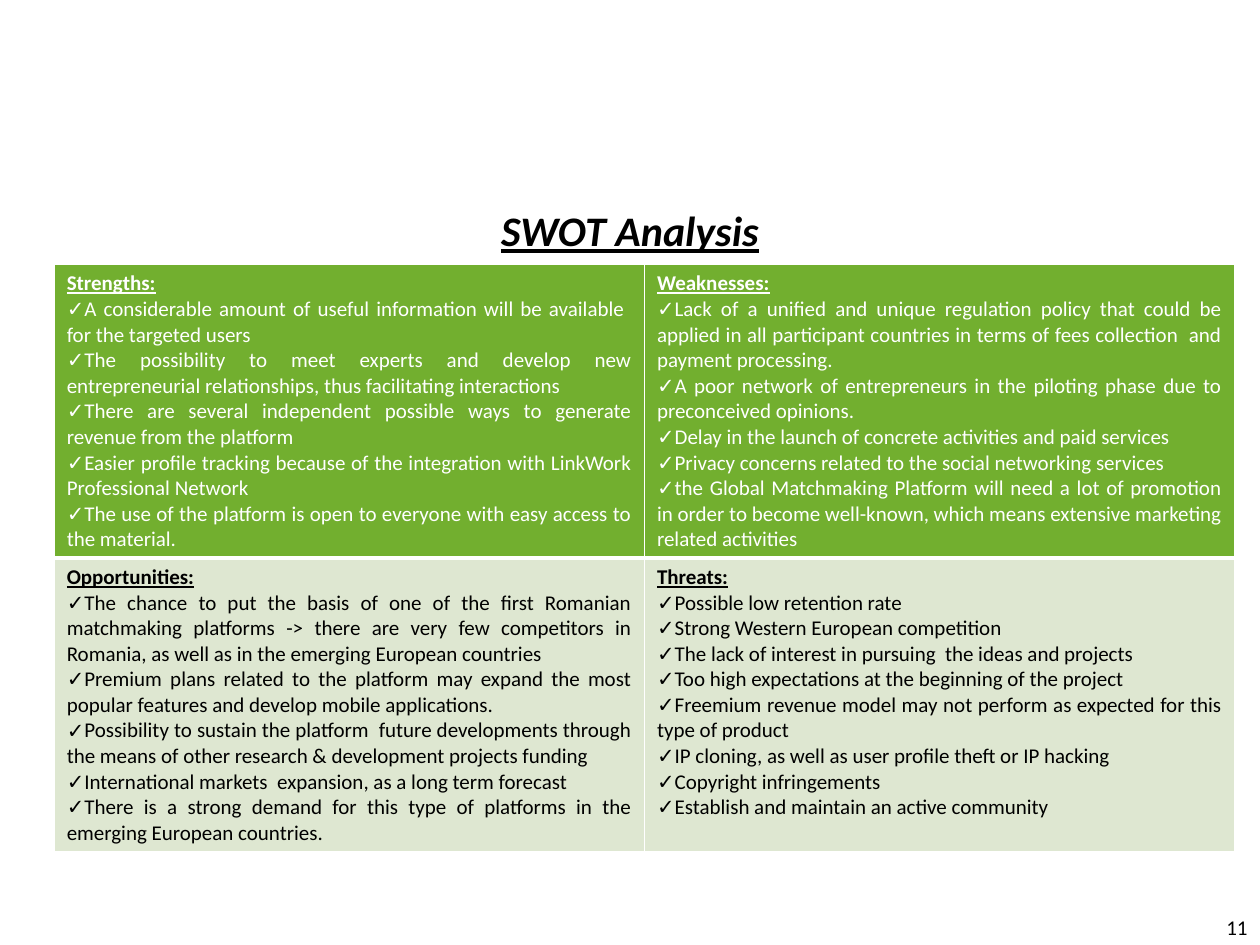
from lxml import etree
from pptx import Presentation
from pptx import util as u
from pptx.dml.color import RGBColor
from pptx.enum import text
from pptx.oxml.ns import qn

INK = {"white": "FFFFFF", "black": "000000", "green": "72AF2F", "pale": "DEE7D1"}
FONT = "Calibri"

# Quadrants, row by row: heading and points
SWOT = [
    [
        ("Strengths:", [
            "A considerable amount of useful information will be available  for the targeted users",
            "The possibility to meet experts and develop new entrepreneurial relationships, "
            "thus facilitating interactions",
            "There are several independent possible ways to generate revenue from the platform",
            "Easier profile tracking because of the integration with LinkWork Professional Network",
            "The use of the platform is open to everyone with easy access to the material.",
        ]),
        ("Weaknesses:", [
            "Lack of a unified and unique regulation policy that could be applied in all "
            "participant countries in terms of fees collection  and payment processing.",
            "A poor network of entrepreneurs in the piloting phase due to preconceived opinions.",
            "Delay in the launch of concrete activities and paid services",
            "Privacy concerns related to the social networking services",
            "the Global Matchmaking Platform will need a lot of promotion in order to become "
            "well-known, which means extensive marketing related activities",
        ]),
    ],
    [
        ("Opportunities:", [
            "The chance to put the basis of one of the first Romanian matchmaking platforms -> "
            "there are very few competitors in Romania, as well as in the emerging European countries",
            "Premium plans related to the platform may expand the most popular features and "
            "develop mobile applications.",
            "Possibility to sustain the platform  future developments through the means of other "
            "research & development projects funding",
            "International markets  expansion, as a long term forecast",
            "There is a strong demand for this type of platforms in the emerging European countries.",
        ]),
        ("Threats:", [
            "Possible low retention rate",
            "Strong Western European competition",
            "The lack of interest in pursuing  the ideas and projects",
            "Too high expectations at the beginning of the project",
            "Freemium revenue model may not perform as expected for this type of product",
            "IP cloning, as well as user profile theft or IP hacking",
            "Copyright infringements",
            "Establish and maintain an active community",
        ]),
    ],
]
LOOKS = [("green", "white"), ("pale", "black")]  # fill and text of each row


def add_run(para, words, size, ink, bold=False, italic=False, line=False):
    run = para.add_run()
    run.text = words
    font = run.font
    font.name, font.size = FONT, u.Pt(size)
    font.bold, font.italic, font.underline = bold, italic, line
    font.color.rgb = RGBColor.from_string(INK[ink])


def add_label(slide, box, words, size, align, **style):
    frame = slide.shapes.add_textbox(*map(u.Inches, box)).text_frame
    frame.word_wrap = True
    frame.vertical_anchor = text.MSO_ANCHOR.MIDDLE
    para = frame.paragraphs[0]
    para.alignment = align
    add_run(para, words, size, "black", **style)


def add_tick(para):
    props = para._p.get_or_add_pPr()
    props.set("marL", "0")
    props.set("indent", "0")
    etree.SubElement(props, qn("a:buFont")).set("typeface", "Arial")
    etree.SubElement(props, qn("a:buChar")).set("char", "✓")


def set_edges(cell, widths):
    props = cell._tc.get_or_add_tcPr()
    for spot, (side, width) in enumerate(widths.items()):
        edge = etree.Element(qn("a:ln" + side), w=str(u.Pt(width)))
        fill = etree.SubElement(edge, qn("a:solidFill"))
        etree.SubElement(fill, qn("a:srgbClr")).set("val", INK["white"])
        props.insert(spot, edge)


def fill_cell(cell, head, points, back, ink):
    cell.fill.solid()
    cell.fill.fore_color.rgb = RGBColor.from_string(INK[back])
    frame = cell.text_frame
    para = frame.paragraphs[0]
    para.alignment = text.PP_ALIGN.JUSTIFY
    add_run(para, head, 12, ink, bold=True, line=True)
    for point in points:
        para = frame.add_paragraph()
        para.alignment = text.PP_ALIGN.JUSTIFY
        add_tick(para)
        add_run(para, point, 12, ink)


def add_swot(slide, box):
    grid = slide.shapes.add_table(2, 2, *map(u.Inches, box)).table
    for r, (row, look) in enumerate(zip(SWOT, LOOKS)):
        for c, (head, points) in enumerate(row):
            cell = grid.cell(r, c)
            fill_cell(cell, head, points, *look)
            # The line between the two rows is heavier
            set_edges(cell, {"L": 1, "R": 1, "T": 3 if r else 1, "B": 1 if r else 3})


def main():
    deck = Presentation()
    deck.slide_width, deck.slide_height = u.Inches(10), u.Inches(7.5)
    slide = deck.slides.add_slide(deck.slide_layouts[6])
    # Title
    add_label(slide, (0.5, 1.55, 9, 0.55), "SWOT Analysis", 24,
              text.PP_ALIGN.CENTER, bold=True, italic=True, line=True)
    # Quadrants
    add_swot(slide, (0.43, 2.1, 9.37, 4.66))
    # Page number
    add_label(slide, (7.67, 7.21, 2.33, 0.29), "11", 12, text.PP_ALIGN.RIGHT)
    deck.save("out.pptx")


if __name__ == "__main__":
    main()
